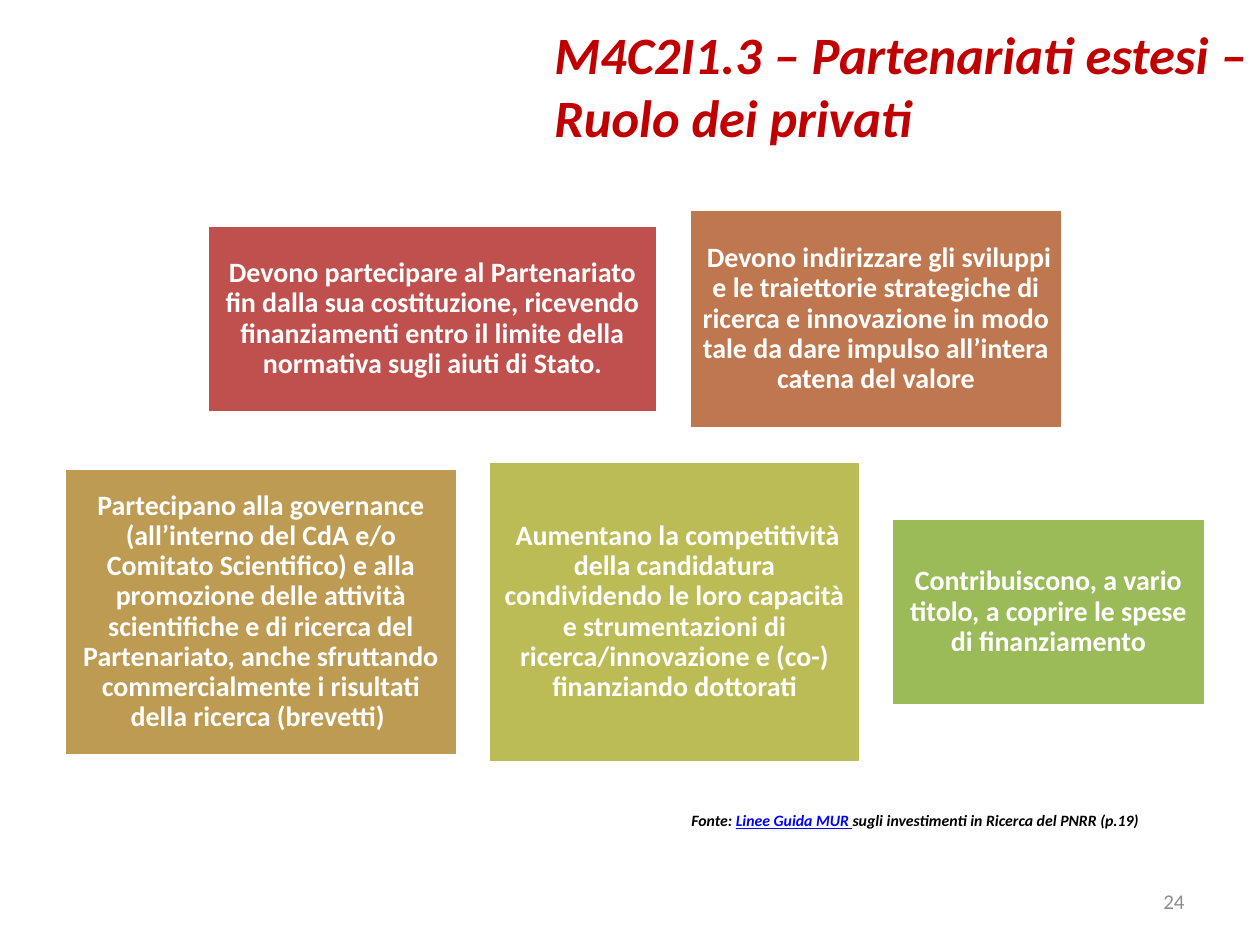
"""Build the slide on the role of private partners in extended partnerships."""
from pptx import Presentation
from pptx.dml.color import RGBColor
from pptx.enum.shapes import MSO_SHAPE as Shape
from pptx.enum.text import MSO_ANCHOR as Anchor, PP_ALIGN as Align
from pptx.util import Pt

SCALE = 914400 / 126
COLORS = {
    "white": "FFFFFF", "black": "000000", "title": "C00000", "link": "0000FF",
    "number": "8C8C8C", "red": "C0504D", "copper": "BF7750", "sand": "BD9B53",
    "olive": "BCBC56", "green": "9BBB59",
}
CENTER_X, GAP, INSET = 635, 31, 9
ROWS = [
    (319, [
        (451, 188, "red", "Devono partecipare al Partenariato fin dalla sua costituzione, "
         "ricevendo finanziamenti entro il limite della normativa sugli aiuti di Stato."),
        (374, 219, "copper", " Devono indirizzare gli sviluppi e le traiettorie strategiche di "
         "ricerca e innovazione in modo tale da dare impulso all’intera catena del valore"),
    ]),
    (612, [
        (393, 287, "sand", "Partecipano alla governance (all’interno del CdA e/o Comitato "
         "Scientifico) e alla promozione delle attività scientifiche e di ricerca del "
         "Partenariato, anche sfruttando commercialmente i risultati della ricerca (brevetti) "),
        (372, 301, "olive", " Aumentano la competitività della candidatura condividendo le loro "
         "capacità e strumentazioni di ricerca/innovazione e (co-) finanziando dottorati"),
        (314, 188, "green", "Contribuiscono, a vario titolo, a coprire le spese di finanziamento"),
    ]),
]
TITLE = [("M4C2I1.3 – Partenariati estesi – Ruolo dei privati", "title", False)]
SOURCE = [
    ("Fonte: ", "black", False),
    ("Linee Guida MUR ", "link", True),
    ("sugli investimenti in Ricerca del PNRR (p.19)", "black", False),
]
NUMBER = [("24", "number", False)]


def px(*lengths):
    return [round(length * SCALE) for length in lengths]


def rgb(name):
    return RGBColor.from_string(COLORS[name])


def write(shape, spans, size, align, anchor=Anchor.TOP, bold=True, italic=False):
    frame = shape.text_frame
    frame.word_wrap = True
    frame.vertical_anchor = anchor
    para = frame.paragraphs[0]
    para.alignment = align
    for text, color, underline in spans:
        span = para.add_run()
        span.text = text
        font = span.font
        font.name, font.size = "Calibri", Pt(size)
        font.bold, font.italic, font.underline = bold, italic, underline
        font.color.rgb = rgb(color)
    return para


def add_card(page, left, middle, width, height, color, text):
    card = page.shapes.add_shape(Shape.RECTANGLE, *px(left, middle - height / 2, width, height))
    card.shadow.inherit = False
    card.fill.solid()
    card.fill.fore_color.rgb = rgb(color)
    card.line.color.rgb = rgb("white")
    card.line.width = Pt(2)
    frame = card.text_frame
    frame.margin_left = frame.margin_top = frame.margin_right = frame.margin_bottom = px(INSET)[0]
    para = write(card, [(text, "white", False)], 16, Align.CENTER, Anchor.MIDDLE)
    para.line_spacing = 0.9


def main():
    deck = Presentation()
    deck.slide_width, deck.slide_height = px(1260, 945)
    page = deck.slides.add_slide(deck.slide_layouts[6])
    for middle, cards in ROWS:
        total = sum(card[0] for card in cards) + GAP * (len(cards) - 1)
        left = CENTER_X - total / 2
        for width, height, color, text in cards:
            add_card(page, left, middle, width, height, color, text)
            left += width + GAP
    title = page.shapes.add_textbox(*px(542, 16, 718, 140))
    write(title, TITLE, 30, Align.JUSTIFY, italic=True)
    source = page.shapes.add_textbox(*px(679, 805, 692, 32))
    write(source, SOURCE, 9, Align.LEFT, italic=True)
    number = page.shapes.add_textbox(*px(903, 876, 294, 50))
    write(number, NUMBER, 12, Align.RIGHT, Anchor.MIDDLE, bold=False)
    deck.save("out.pptx")


if __name__ == "__main__":
    main()
